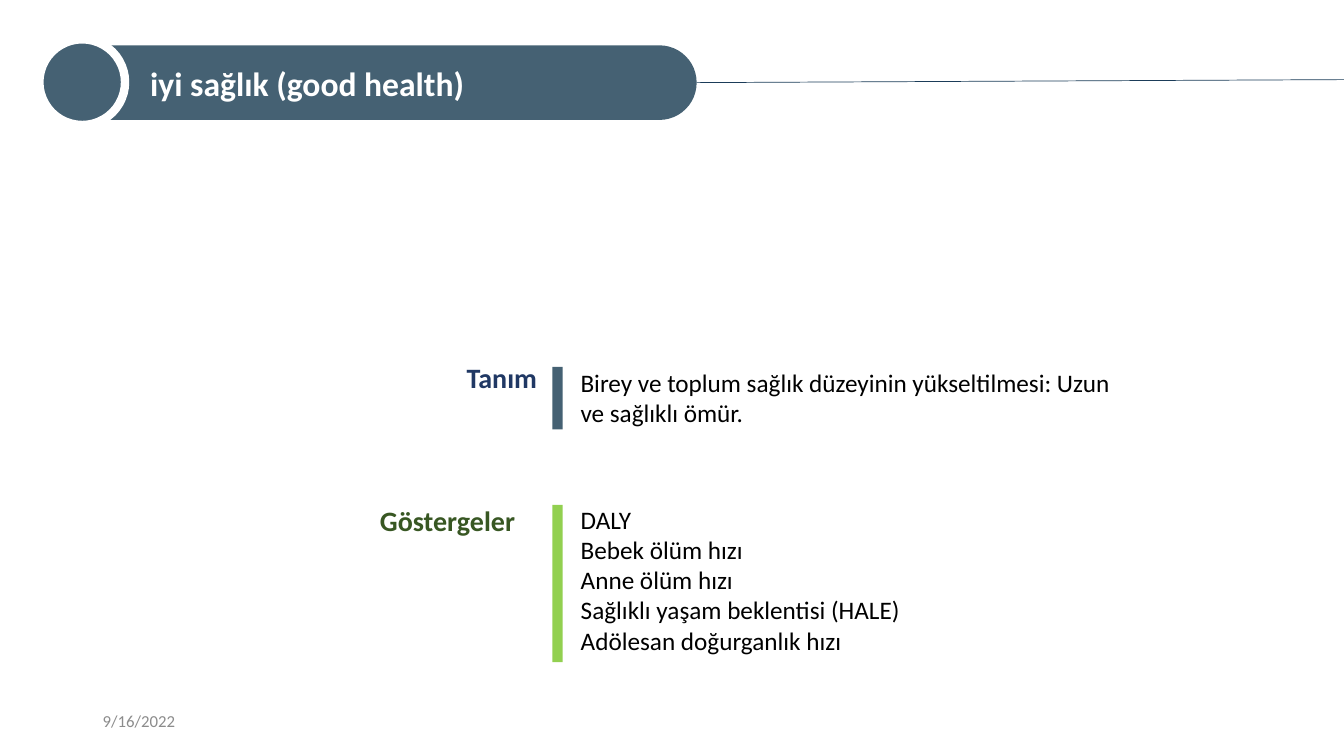
from dataclasses import dataclass

from lxml import etree
from pptx import Presentation
from pptx.dml.color import RGBColor
from pptx.enum.shapes import MSO_CONNECTOR as Connector, MSO_SHAPE as Shape
from pptx.enum.text import MSO_ANCHOR as Anchor, MSO_AUTO_SIZE as AutoSize, PP_ALIGN as Align
from pptx.oxml.ns import qn
from pptx.util import Inches, Pt


@dataclass(frozen=True)
class Theme:
    """Colours, font and type sizes of the slide."""
    font: str = "Calibri"
    slate: str = "456173"
    rule: str = "1B3C59"
    green: str = "92D050"
    navy: str = "203864"
    forest: str = "385723"
    grey: str = "8C8C8C"
    white: str = "FFFFFF"
    black: str = "000000"
    title: int = 24
    label: int = 20
    body: int = 18
    date: int = 12


THEME = Theme()
BAR_LEFT, BAR_WIDTH, TEXT_LEFT = 5.48, 0.1, 5.66
INDICATORS = (
    "DALY",
    "Bebek ölüm hızı",
    "Anne ölüm hızı",
    "Sağlıklı yaşam beklentisi (HALE)",
    "Adölesan doğurganlık hızı",
)


def place(shape, left, top, width, height):
    """Move and size a shape in inches."""
    shape.left, shape.top = Inches(left), Inches(top)
    shape.width, shape.height = Inches(width), Inches(height)


def write(shape, text, size, color, bold=False, anchor=Anchor.TOP):
    """Fill a shape with left-aligned, unbulleted text."""
    frame = shape.text_frame
    frame.text = text
    frame.word_wrap = True
    frame.auto_size = AutoSize.NONE
    frame.vertical_anchor = anchor
    for para in frame.paragraphs:
        para.alignment = Align.LEFT
        para.space_before = Pt(0)
        properties = para._p.get_or_add_pPr()
        properties.set("marL", "0")
        properties.set("indent", "0")
        etree.SubElement(properties, qn("a:buNone"))
        for span in para.runs:
            span.font.name = THEME.font
            span.font.size = Pt(size)
            span.font.bold = bold
            span.font.color.rgb = RGBColor.from_string(color)


def add_text(page, box, *args, **options):
    """Add a formatted text box."""
    shape = page.shapes.add_textbox(*map(Inches, box))
    write(shape, *args, **options)
    return shape


def add_block(page, kind, box, color):
    """Add a plain filled shape without outline."""
    shape = page.shapes.add_shape(kind, *map(Inches, box))
    shape.shadow.inherit = False
    shape.fill.solid()
    shape.fill.fore_color.rgb = RGBColor.from_string(color)
    shape.line.fill.background()
    return shape


def add_rule(page, start, end):
    """Add the thin line that runs to the slide edge."""
    rule = page.shapes.add_connector(Connector.STRAIGHT, *map(Inches, start + end))
    rule.line.color.rgb = RGBColor.from_string(THEME.rule)
    rule.line.width = Pt(0.5)
    etree.SubElement(rule.element.spPr, qn("a:effectLst"))


def add_header(page, text):
    """Build the pill, its circle, the rule and the title on top."""
    pill = add_block(page, Shape.ROUNDED_RECTANGLE, (0.68, 0.45, 6.23, 0.74), THEME.slate)
    pill.adjustments[0] = 0.5
    circle = add_block(page, Shape.OVAL, (0.39, 0.39, 0.85, 0.85), THEME.slate)
    circle.line.color.rgb = RGBColor.from_string(THEME.white)
    circle.line.width = Pt(6)
    add_rule(page, (6.91, 0.82), (13.33, 0.79))
    title = page.shapes.title
    place(title, 1.39, 0.45, 5.4, 0.74)
    write(title, text, THEME.title, THEME.white, bold=True, anchor=Anchor.MIDDLE)
    circle.element.addnext(title.element)


def add_section(page, label, box, label_color, bar_top, bar_height, bar_color):
    """Add a bold label and the coloured bar to its right."""
    add_text(page, box, label, THEME.label, label_color, bold=True)
    add_block(page, Shape.RECTANGLE, (BAR_LEFT, bar_top, BAR_WIDTH, bar_height), bar_color)


def main():
    """Build and save the slide."""
    deck = Presentation()
    deck.slide_width, deck.slide_height = Inches(13.33), Inches(7.5)
    page = deck.slides.add_slide(deck.slide_layouts[1])

    add_header(page, "iyi sağlık (good health)")
    add_text(page, (0.92, 6.95, 3, 0.4), "9/16/2022", THEME.date, THEME.grey,
             anchor=Anchor.MIDDLE)

    definition = add_text(page, (TEXT_LEFT, 3.59, 5.5, 0.71),
                          "Birey ve toplum sağlık düzeyinin yükseltilmesi: Uzun ve sağlıklı ömür.",
                          THEME.body, THEME.black)
    definition.fill.solid()
    definition.fill.fore_color.rgb = RGBColor.from_string(THEME.white)
    add_section(page, "Tanım", (4.53, 3.53, 1, 0.44), THEME.navy, 3.64, 0.62, THEME.slate)

    indicators = page.placeholders[1]
    place(indicators, TEXT_LEFT, 4.95, 6.9, 1.62)
    write(indicators, "\n".join(INDICATORS), THEME.body, THEME.black)
    add_section(page, "Göstergeler", (3.67, 4.95, 1.77, 0.44), THEME.forest,
                5.01, 1.56, THEME.green)

    deck.save("out.pptx")


if __name__ == "__main__":
    main()
